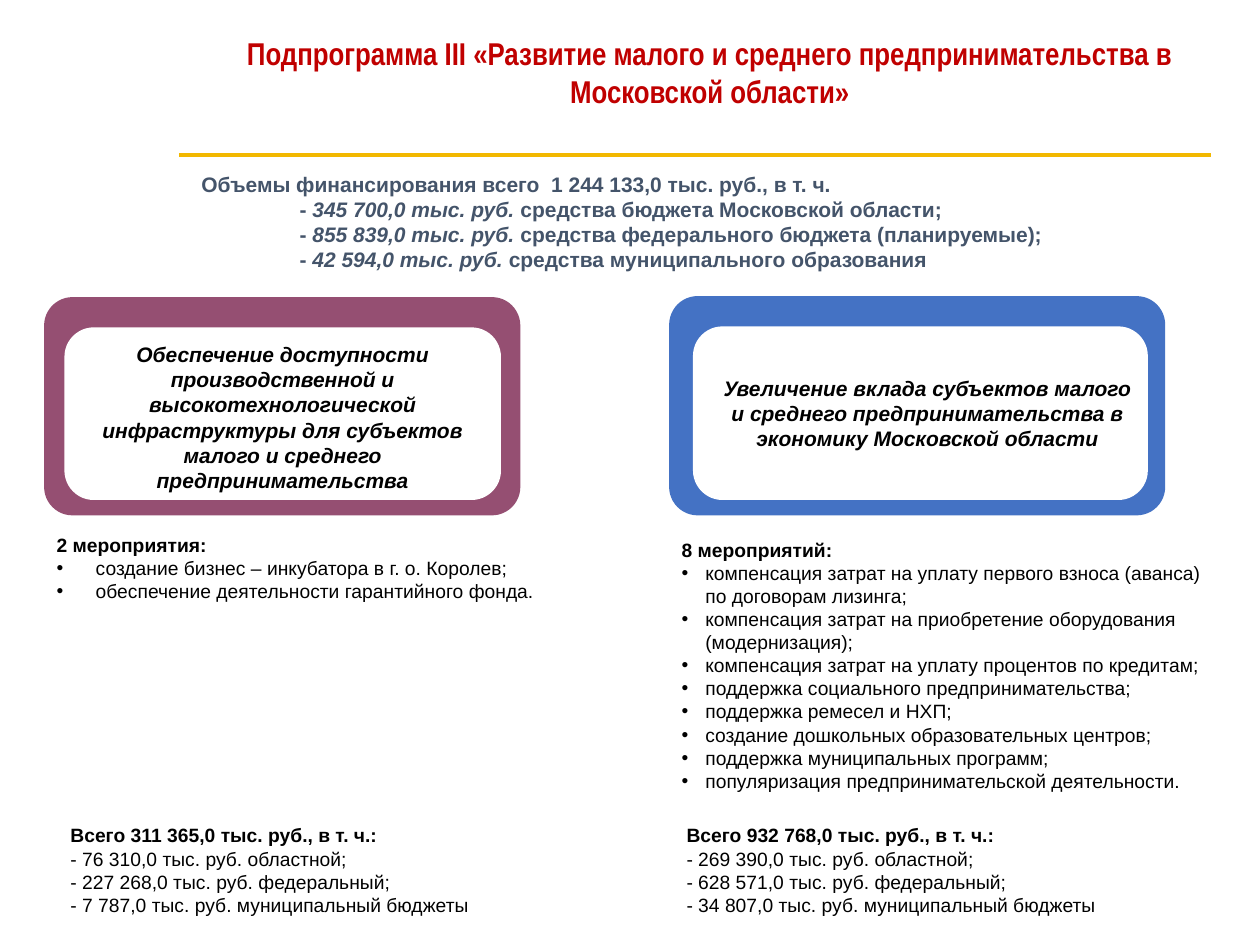
from dataclasses import dataclass

from lxml import etree
from pptx import Presentation
from pptx import util as u
from pptx.dml.color import RGBColor
from pptx.enum import shapes, text
from pptx.oxml.ns import qn

COLOURS = {
    "title": "C00000",
    "rule": "F2B800",
    "funding": "44546A",
    "text": "000000",
    "plum": "954F72",
    "blue": "4472C4",
    "white": "FFFFFF",
}


@dataclass
class Box:
    """Left, top, width and height in centimetres."""
    left: float
    top: float
    width: float
    height: float

    def lengths(self) -> list:
        return [u.Cm(n) for n in (self.left, self.top, self.width, self.height)]


@dataclass
class Direction:
    colour: str
    frame: Box
    panel: Box
    goal_box: Box
    goal: str
    list_box: Box
    heading: str
    measures: list[str]
    indent: float
    total_box: Box
    total: str
    budgets: list[str]


def rgb(name: str) -> RGBColor:
    return RGBColor.from_string(COLOURS[name])


def add_text_frame(slide, box: Box):
    frame = slide.shapes.add_textbox(*box.lengths()).text_frame
    frame.word_wrap = True
    return frame


def next_paragraph(frame):
    first = frame.paragraphs[0]
    return frame.add_paragraph() if first.runs else first


def set_indent(paragraph, left: float, first_line: float = 0, bullet: str = "") -> None:
    properties = paragraph._p.get_or_add_pPr()
    properties.set("marL", str(u.Cm(left)))
    properties.set("indent", str(u.Cm(first_line)))
    if bullet:
        etree.SubElement(properties, qn("a:buFont")).set("typeface", "Arial")
        etree.SubElement(properties, qn("a:buChar")).set("char", bullet)


def set_font(paragraph, size: float, colour: str = "text", bold: bool = False,
             italic: bool = False, name: str = "Arial") -> None:
    font = paragraph.font
    font.name, font.size = name, u.Pt(size)
    font.bold, font.italic = bold, italic
    font.color.rgb = rgb(colour)


def add_centred_text(slide, box: Box, wording: str, size: float, **style) -> None:
    paragraph = next_paragraph(add_text_frame(slide, box))
    paragraph.text = wording
    paragraph.alignment = text.PP_ALIGN.CENTER
    set_font(paragraph, size, bold=True, **style)


def add_headed_lines(slide, box: Box, heading: str, lines: list[str],
                     bullet_indent: float = 0) -> None:
    frame = add_text_frame(slide, box)
    for number, line in enumerate([heading, *lines]):
        paragraph = next_paragraph(frame)
        paragraph.text = line
        if number and bullet_indent:
            set_indent(paragraph, bullet_indent, -bullet_indent, "•")
        set_font(paragraph, 11, bold=number == 0)


def add_rounded(slide, box: Box, colour: str, rounding: float) -> None:
    shape = slide.shapes.add_shape(shapes.MSO_SHAPE.ROUNDED_RECTANGLE, *box.lengths())
    shape.adjustments[0] = rounding
    shape.shadow.inherit = False
    shape.fill.solid()
    shape.fill.fore_color.rgb = rgb(colour)
    shape.line.fill.background()


def add_rule(slide, left: float, right: float, top: float) -> None:
    rule = slide.shapes.add_connector(
        shapes.MSO_CONNECTOR.STRAIGHT, u.Cm(left), u.Cm(top), u.Cm(right), u.Cm(top))
    rule.line.color.rgb = rgb("rule")
    rule.line.width = u.Pt(2)
    etree.SubElement(rule._element.spPr, qn("a:effectLst"))


def add_funding(slide, box: Box, heading: str, sources: list[tuple[str, str]]) -> None:
    frame = add_text_frame(slide, box)
    paragraph = next_paragraph(frame)
    paragraph.text = heading
    set_font(paragraph, 12, "funding", bold=True)
    for amount, source in sources:
        paragraph = next_paragraph(frame)
        set_indent(paragraph, 1.98)
        set_font(paragraph, 12, "funding", bold=True)
        for wording, italic in (("- ", False), (amount, True), (f" {source}", False)):
            run = paragraph.add_run()
            run.text = wording
            run.font.italic = italic


def add_direction(slide, direction: Direction) -> None:
    add_rounded(slide, direction.frame, direction.colour, 0.13)
    add_rounded(slide, direction.panel, "white", 0.17)
    add_centred_text(slide, direction.goal_box, direction.goal, 12, italic=True)
    add_headed_lines(slide, direction.list_box, direction.heading,
                     direction.measures, direction.indent)
    add_headed_lines(slide, direction.total_box, direction.total, direction.budgets)


DIRECTIONS = [
    Direction(
        "plum", Box(0.89, 5.99, 9.6, 4.4), Box(1.3, 6.6, 8.8, 3.48),
        Box(1.3, 6.76, 8.8, 3.33),
        "Обеспечение доступности производственной и высокотехнологической "
        "инфраструктуры для субъектов малого и среднего предпринимательства",
        Box(0.89, 10.62, 11.13, 1.68), "2 мероприятия:",
        ["создание бизнес – инкубатора в г. о. Королев;",
         "обеспечение деятельности гарантийного фонда."],
        0.79,
        Box(1.17, 16.48, 10.6, 2.13), "Всего 311 365,0 тыс. руб., в т. ч.:",
        ["- 76 310,0 тыс. руб. областной;",
         "- 227 268,0 тыс. руб. федеральный;",
         "- 7 787,0 тыс. руб. муниципальный бюджеты"]),
    Direction(
        "blue", Box(13.49, 5.97, 10, 4.42), Box(13.97, 6.58, 9.17, 3.5),
        Box(14.2, 7.44, 9, 1.8),
        "Увеличение вклада субъектов малого и среднего предпринимательства "
        "в экономику Московской области",
        Box(13.49, 10.72, 11.91, 5.44), "8 мероприятий:",
        ["компенсация затрат на уплату первого взноса (аванса) \vпо договорам лизинга;",
         "компенсация затрат на приобретение оборудования (модернизация);",
         "компенсация затрат на уплату процентов по кредитам;",
         "поддержка социального предпринимательства;",
         "поддержка ремесел и НХП;",
         "создание дошкольных образовательных центров;",
         "поддержка муниципальных программ;",
         "популяризация предпринимательской деятельности."],
        0.48,
        Box(13.59, 16.48, 9.58, 2.13), "Всего 932 768,0 тыс. руб., в т. ч.:",
        ["- 269 390,0 тыс. руб. областной;",
         "- 628 571,0 тыс. руб. федеральный;",
         "- 34 807,0 тыс. руб. муниципальный бюджеты"]),
]


def main() -> None:
    presentation = Presentation()
    presentation.slide_width, presentation.slide_height = u.Cm(25.4), u.Cm(19.05)
    slide = presentation.slides.add_slide(presentation.slide_layouts[6])

    # Title and rule
    add_centred_text(
        slide, Box(3.91, 0.56, 20.8, 1.8),
        "Подпрограмма III «Развитие малого и среднего предпринимательства "
        "в Московской области»", 18, colour="title", name="Arial Narrow")
    add_rule(slide, 3.61, 24.41, 3.12)

    # Overall funding
    add_funding(
        slide, Box(3.81, 3.33, 20.6, 2.31),
        "Объемы финансирования всего  1 244 133,0 тыс. руб., в т. ч.",
        [("345 700,0 тыс. руб.", "средства бюджета Московской области;"),
         ("855 839,0 тыс. руб.", "средства федерального бюджета (планируемые);"),
         ("42 594,0 тыс. руб.", "средства муниципального образования")])

    # Two directions with their measures and totals
    for direction in DIRECTIONS:
        add_direction(slide, direction)

    presentation.save("out.pptx")


if __name__ == "__main__":
    main()
